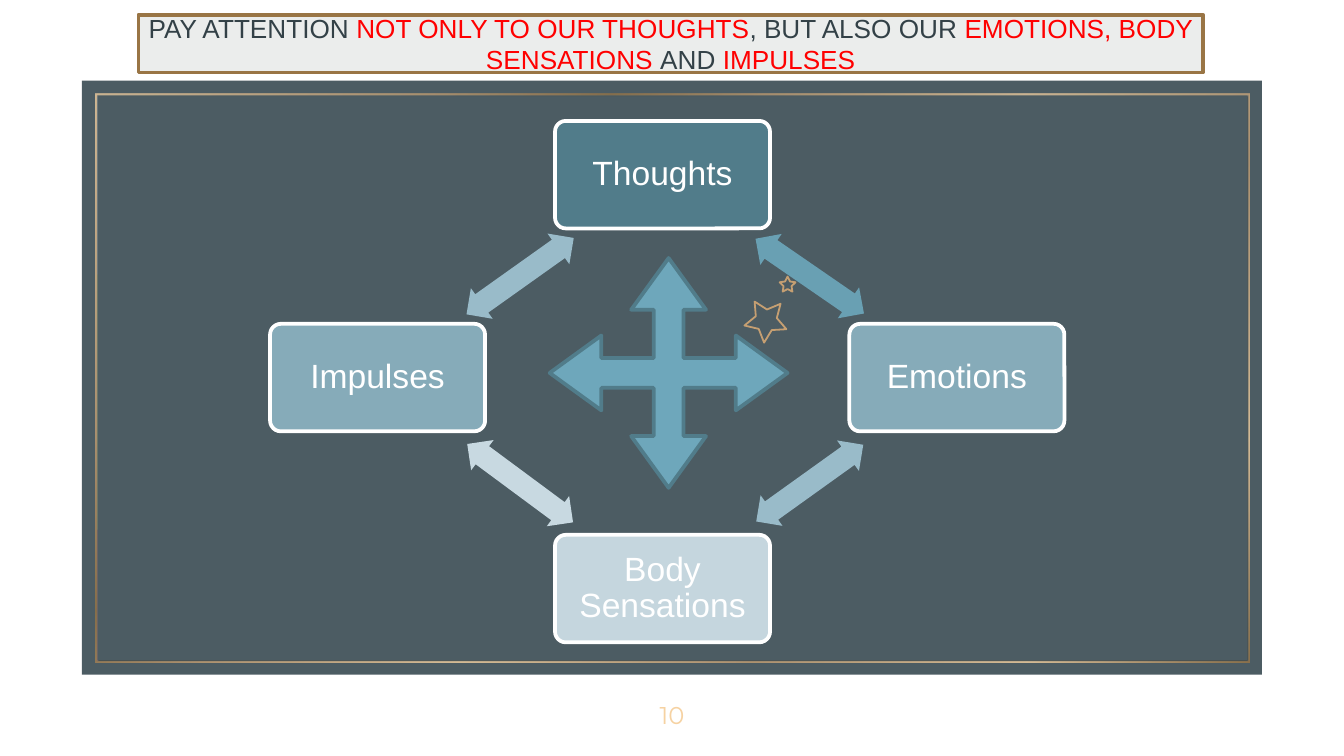
from dataclasses import dataclass
from math import atan2, cos, degrees, radians, sin

from lxml.etree import SubElement
from pptx import Presentation
from pptx.dml.color import RGBColor
from pptx.enum.shapes import MSO_SHAPE
from pptx.enum.text import MSO_ANCHOR, PP_ALIGN
from pptx.oxml.ns import qn
from pptx.util import Inches, Pt

# Grid of square cells, a tenth of an inch each
COLS, ROWS = 100, 56.25
CELL = Inches(0.1)


@dataclass(frozen=True)
class Theme:
    font: str = "Arial"
    number_font: str = "Montserrat"
    title_size: float = 14
    node_size: float = 18
    number_size: float = 13
    line: float = 2
    thin_line: float = 0.96
    white: str = "FFFFFF"
    panel: str = "001721"
    banner: str = "E7E9E8"
    ink: str = "334147"
    accent: str = "FF0000"
    gold: str = "C59F72"
    bronze: str = "997545"
    cream: str = "F6D2A2"
    cross: str = "6EA7BB"
    cross_line: str = "517C8A"


T = Theme()

TITLE = [
    ("PAY ATTENTION ", T.ink),
    ("NOT ONLY TO OUR THOUGHTS", T.accent),
    (", BUT ALSO OUR", T.ink),
    (" EMOTIONS, BODY SENSATIONS ", T.accent),
    ("AND", T.ink),
    (" IMPULSES", T.accent),
]

# Label, centre column, centre row, box colour, colour of the arrow to the next
CYCLE = [
    ("Thoughts", 49.3, 13, "517C8A", "69A0B3"),
    ("Emotions", 71.2, 28.1, "86ABB9", "99BBC9"),
    ("Body Sensations", 49.3, 43.8, "C5D6DE", "C8D9E1"),
    ("Impulses", 28.1, 28.1, "86ABB9", "99BBC9"),
]
NODE_W, NODE_H = 16, 8
ARROW_W, ARROW_H = 9.8, 2.8

FRAME_STOPS = [(0, T.cream), (20, T.gold), (30, T.bronze), (39, T.gold),
               (54, T.cream), (71, T.gold), (87, T.cream), (100, T.bronze)]


def grid(*cells):
    return [round(c * CELL) for c in cells]


def add_alpha(color, percent):
    SubElement(color, qn("a:alpha"), val=str(percent * 1000))


def add_preset(shapes, kind, box, fill, line=None, adj=(), alpha=None):
    """Add a flat preset shape; box is left, top, width, height in cells."""
    sp = shapes.add_shape(kind, *grid(*box))
    sp.shadow.inherit = False
    for i, value in enumerate(adj):
        sp.adjustments[i] = value
    sp.fill.solid()
    sp.fill.fore_color.rgb = RGBColor.from_string(fill)
    if alpha:
        add_alpha(sp.fill._xPr.find(qn("a:solidFill"))[0], alpha)
    style_line(sp, line, T.line)
    return sp


def style_line(sp, color, width):
    if color:
        sp.line.color.rgb = RGBColor.from_string(color)
        sp.line.width = Pt(width)
    else:
        sp.line.fill.background()


def set_gradient(sp, stops, angle, alpha):
    sp.fill.gradient()
    sp.fill.gradient_angle = 360 - angle
    gs_list = sp.fill._xPr.find(qn("a:gradFill")).find(qn("a:gsLst"))
    for gs in list(gs_list):
        gs_list.remove(gs)
    for pos, color in stops:
        gs = SubElement(gs_list, qn("a:gs"), pos=str(pos * 1000))
        add_alpha(SubElement(gs, qn("a:srgbClr"), val=color), alpha)


def write(sp, runs, size, font=T.font, margin=0, spacing=None):
    """Write one centred paragraph of (text, colour) runs."""
    tf = sp.text_frame
    tf.word_wrap = True
    tf.vertical_anchor = MSO_ANCHOR.MIDDLE
    tf.margin_left = tf.margin_right = Inches(margin)
    tf.margin_top = tf.margin_bottom = Inches(margin)
    p = tf.paragraphs[0]
    p.alignment = PP_ALIGN.CENTER
    p.line_spacing = spacing
    for text, color in runs:
        r = p.add_run()
        r.text = text
        r.font.name = font
        r.font.size = Pt(size)
        r.font.color.rgb = RGBColor.from_string(color)


def add_star(shapes, x, y, radius, start):
    """Outline a five-pointed star whose first tip lies at angle start."""
    points = []
    for i in range(10):
        reach = radius if i % 2 == 0 else radius / 2
        a = radians(start + 36 * i)
        points.append(grid(x + reach * cos(a), y + reach * sin(a)))
    builder = shapes.build_freeform(*points[0])
    builder.add_line_segments(points[1:], close=True)
    sp = builder.convert_to_shape()
    sp.shadow.inherit = False
    sp.fill.background()
    style_line(sp, T.gold, T.thin_line)


def add_panel(shapes):
    add_preset(shapes, MSO_SHAPE.RECTANGLE, (6.1, 6, 87.8, 44.2), T.panel, alpha=70)
    frame = add_preset(shapes, MSO_SHAPE.FRAME, (7.1, 7, 85.9, 42.3), T.gold, adj=[0.004])
    set_gradient(frame, FRAME_STOPS, 45, 80)


def add_cycle(shapes):
    """Add the boxes, each followed by an arrow halfway to the next one."""
    for i, (label, x, y, fill, arrow_fill) in enumerate(CYCLE):
        box = (x - NODE_W / 2, y - NODE_H / 2, NODE_W, NODE_H)
        node = add_preset(shapes, MSO_SHAPE.ROUNDED_RECTANGLE, box, fill, T.white, [0.1])
        write(node, [(label, T.white)], T.node_size, margin=0.07, spacing=0.9)

        next_x, next_y = CYCLE[(i + 1) % len(CYCLE)][1:3]
        box = ((x + next_x - ARROW_W) / 2, (y + next_y - ARROW_H) / 2, ARROW_W, ARROW_H)
        arrow = add_preset(shapes, MSO_SHAPE.LEFT_RIGHT_ARROW, box, arrow_fill, adj=[0.6, 0.5])
        arrow.rotation = degrees(atan2(next_y - y, next_x - x)) % 360


def main():
    prs = Presentation()
    prs.slide_width, prs.slide_height = grid(COLS, ROWS)
    s = prs.slides.add_slide(prs.slide_layouts[6])

    add_panel(s.shapes)
    add_star(s.shapes, 57, 23.85, 1.65, -49)
    add_star(s.shapes, 58.6, 21.2, 0.62, -90)
    number = s.shapes.add_textbox(*grid(47, 50.2, 6, 6))
    write(number, [("10", T.cream)], T.number_size, T.number_font)

    add_cycle(s.shapes.add_group_shape().shapes)
    add_preset(s.shapes, MSO_SHAPE.QUAD_ARROW, (40.9, 19.2, 17.7, 17.1),
               T.cross, T.cross_line, [0.13, 0.163, 0.225])
    banner = add_preset(s.shapes, MSO_SHAPE.RECTANGLE, (10.3, 1.1, 79.2, 4.3),
                        T.banner, T.bronze, alpha=80)
    write(banner, TITLE, T.title_size)

    prs.save("out.pptx")


if __name__ == "__main__":
    main()
